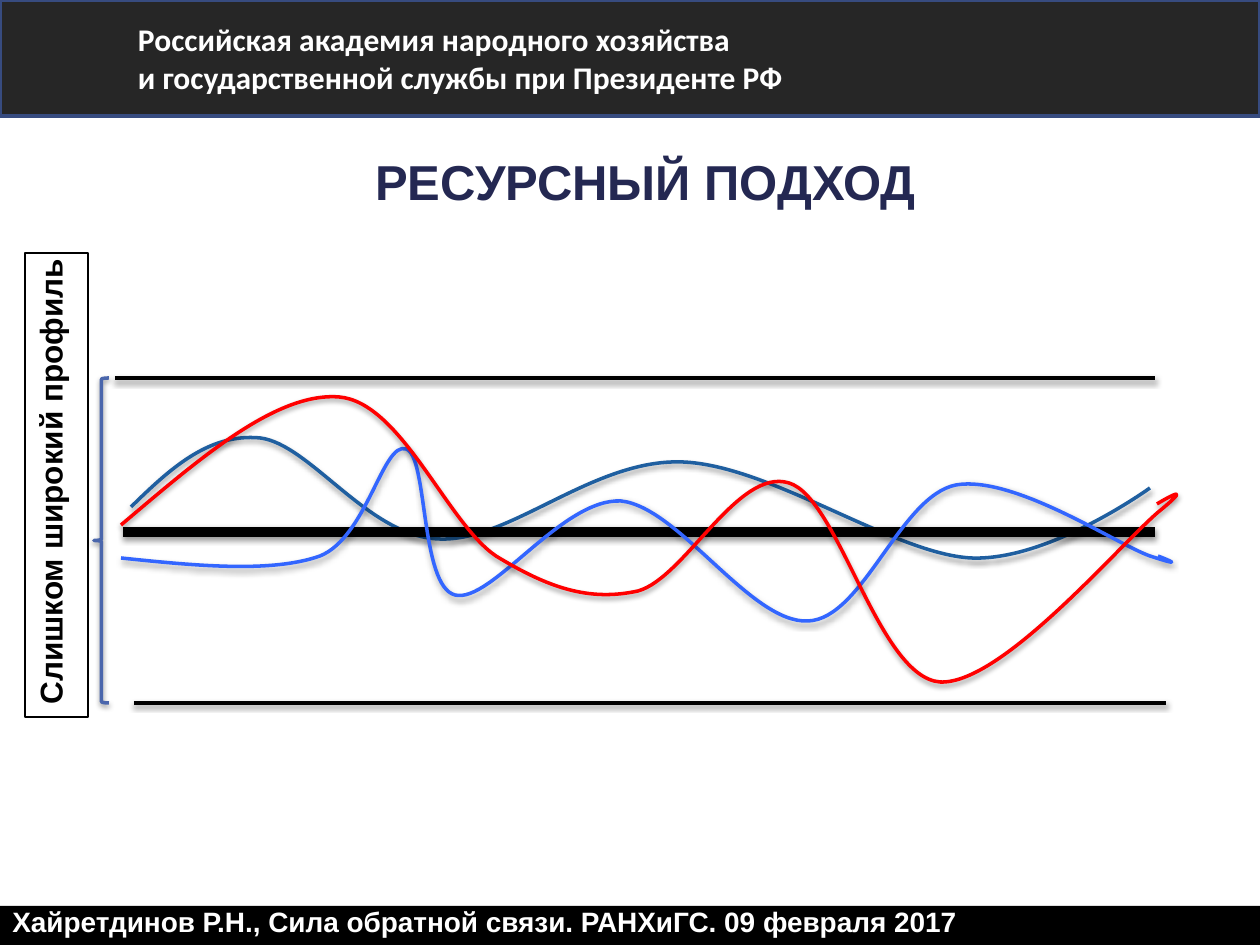
import lxml.etree
import pptx
import pptx.dml.color
import pptx.enum.shapes
import pptx.enum.text
import pptx.oxml.ns
import pptx.util

EMU_PER_PX = 914400 / 126
BLACK = pptx.dml.color.RGBColor(0x00, 0x00, 0x00)
WHITE = pptx.dml.color.RGBColor(0xFF, 0xFF, 0xFF)
CHARCOAL = pptx.dml.color.RGBColor(0x26, 0x26, 0x26)
HEADER_EDGE = pptx.dml.color.RGBColor(0x37, 0x4B, 0x7F)
NAVY = pptx.dml.color.RGBColor(0x24, 0x28, 0x52)
BRACE_BLUE = pptx.dml.color.RGBColor(0x4A, 0x66, 0xAC)
STEEL = pptx.dml.color.RGBColor(0x1F, 0x5F, 0xA0)
AZURE = pptx.dml.color.RGBColor(0x33, 0x66, 0xFF)
RED = pptx.dml.color.RGBColor(0xFF, 0x00, 0x00)

SHAPES = pptx.enum.shapes.MSO_SHAPE
ALIGN = pptx.enum.text.PP_ALIGN
ANCHOR = pptx.enum.text.MSO_ANCHOR
qn = pptx.oxml.ns.qn

PROFILES = [
    (STEEL, (131, 507), [
        (169, 470), (208, 433), (260, 438), (310, 444), (368, 536), (438, 539),
        (509, 543), (592, 459), (682, 462), (770, 465), (892, 553), (970, 558),
        (1048, 562), (1150, 488), (1150, 488)]),
    (AZURE, (121, 558), [
        (197, 566), (272, 573), (320, 556), (367, 537), (383, 441), (406, 449),
        (428, 455), (420, 586), (455, 595), (491, 604), (562, 498), (621, 501),
        (679, 507), (751, 624), (808, 621), (863, 619), (900, 496), (956, 485),
        (1014, 475), (1116, 544), (1150, 556), (1184, 567), (1171, 561), (1158, 556)]),
    (RED, (121, 525), [
        (199, 459), (276, 392), (339, 397), (401, 402), (447, 523), (496, 556),
        (547, 587), (588, 602), (638, 591), (685, 578), (738, 467), (789, 483),
        (839, 498), (878, 677), (940, 682), (1003, 685), (1125, 538), (1162, 509),
        (1198, 479), (1157, 504), (1157, 504)]),
]


def emu(px):
    return pptx.util.Emu(round(px * EMU_PER_PX))


class SlideBuilder:
    font = "Arial"

    def __init__(self, slide):
        self.slide = slide
        self.shapes = slide.shapes

    def cast_shadow(self, shape):
        properties = shape._element.spPr
        for effects in properties.findall(qn("a:effectLst")):
            properties.remove(effects)
        effects = lxml.etree.SubElement(properties, qn("a:effectLst"))
        shadow = lxml.etree.SubElement(
            effects, qn("a:outerShdw"), blurRad="40000", dist="20000",
            dir="5400000", rotWithShape="0")
        tint = lxml.etree.SubElement(shadow, qn("a:srgbClr"), val=str(BLACK))
        lxml.etree.SubElement(tint, qn("a:alpha"), val="38000")

    def outline(self, shape, color, width):
        shape.line.color.rgb = color
        shape.line.width = pptx.util.Pt(width)

    def block(self, kind, box, fill=None, edge=None, width=1):
        shape = self.shapes.add_shape(kind, *map(emu, box))
        shape.shadow.inherit = False
        if fill is None:
            shape.fill.background()
        else:
            shape.fill.solid()
            shape.fill.fore_color.rgb = fill
        if edge is None:
            shape.line.fill.background()
        else:
            self.outline(shape, edge, width)
        return shape

    def fill_text(self, shape, lines, size, color, font=None, align=ALIGN.LEFT,
                  anchor=ANCHOR.TOP, wrap=True):
        frame = shape.text_frame
        frame.word_wrap = wrap
        frame.vertical_anchor = anchor
        paragraph = frame.paragraphs[0]
        paragraph.alignment = align
        for index, line in enumerate(lines):
            if index:
                paragraph.add_line_break()
            run = paragraph.add_run()
            run.text = line
            run.font.name = font or self.font
            run.font.size = pptx.util.Pt(size)
            run.font.bold = True
            run.font.color.rgb = color
        return frame

    def label(self, box, text, size, color, **style):
        holder = self.shapes.add_textbox(*map(emu, box))
        return self.fill_text(holder, [text], size, color, **style)

    def level(self, left, right, y, width):
        line = self.shapes.add_connector(
            pptx.enum.shapes.MSO_CONNECTOR.STRAIGHT,
            emu(left), emu(y), emu(right), emu(y))
        self.outline(line, BLACK, width)
        self.cast_shadow(line)

    def curve(self, color, start, points):
        builder = self.shapes.build_freeform(*start, scale=EMU_PER_PX)
        builder.add_line_segments(points, close=False)
        shape = builder.convert_to_shape()
        segments = list(shape._element.iter(qn("a:lnTo")))
        for first in range(0, len(segments), 3):
            trio = segments[first:first + 3]
            bezier = lxml.etree.Element(qn("a:cubicBezTo"))
            trio[0].addprevious(bezier)
            for segment in trio:
                bezier.append(segment[0])
                segment.getparent().remove(segment)
        shape.fill.background()
        self.outline(shape, color, 2)
        self.cast_shadow(shape)


def main():
    deck = pptx.Presentation()
    deck.slide_width, deck.slide_height = emu(1260), emu(945)
    page = SlideBuilder(deck.slides.add_slide(deck.slide_layouts[6]))

    page.block(SHAPES.RECTANGLE, (0, 906, 1260, 39), BLACK)
    page.label((0, 898, 983, 47),
               "Хайретдинов Р.Н., Сила обратной связи. РАНХиГС. 09 февраля 2017",
               16, WHITE, wrap=False)

    header = page.block(SHAPES.RECTANGLE, (0, 0, 1260, 116), CHARCOAL, HEADER_EDGE, 2)
    academy = page.fill_text(header, ["Российская академия народного хозяйства",
                                      "и государственной службы при Президенте РФ"],
                             18, WHITE, font="Calibri", anchor=ANCHOR.MIDDLE)
    academy.margin_left = emu(138)

    page.label((105, 145, 1081, 72), "РЕСУРСНЫЙ ПОДХОД", 28, NAVY,
               align=ALIGN.CENTER, anchor=ANCHOR.MIDDLE)

    steel, azure, red = PROFILES
    page.curve(*steel)
    page.level(123, 1155, 532, 6)
    page.curve(*azure)
    page.level(134, 1166, 703, 2)
    page.level(115, 1155, 378, 2)

    brace = page.block(SHAPES.LEFT_BRACE, (94, 378, 15, 325), edge=BRACE_BLUE, width=2)
    page.cast_shadow(brace)

    axis = page.block(SHAPES.RECTANGLE, (25, 253, 63, 464), edge=BLACK, width=0.75)
    caption = page.fill_text(axis, ["Слишком широкий профиль"], 18, BLACK, wrap=False)
    caption._txBody.bodyPr.set("vert", "vert270")

    page.curve(*red)
    deck.save("out.pptx")


if __name__ == "__main__":
    main()
